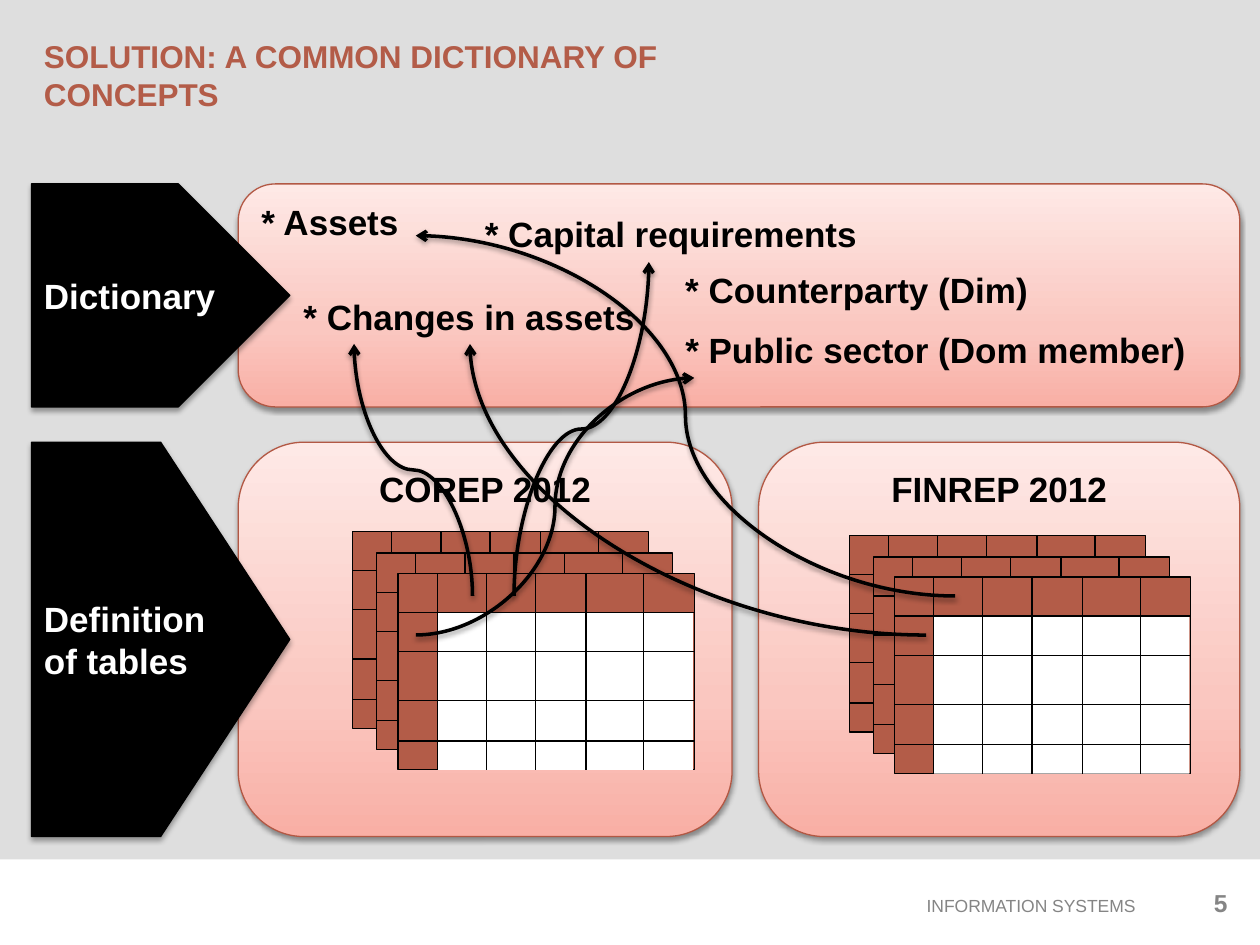
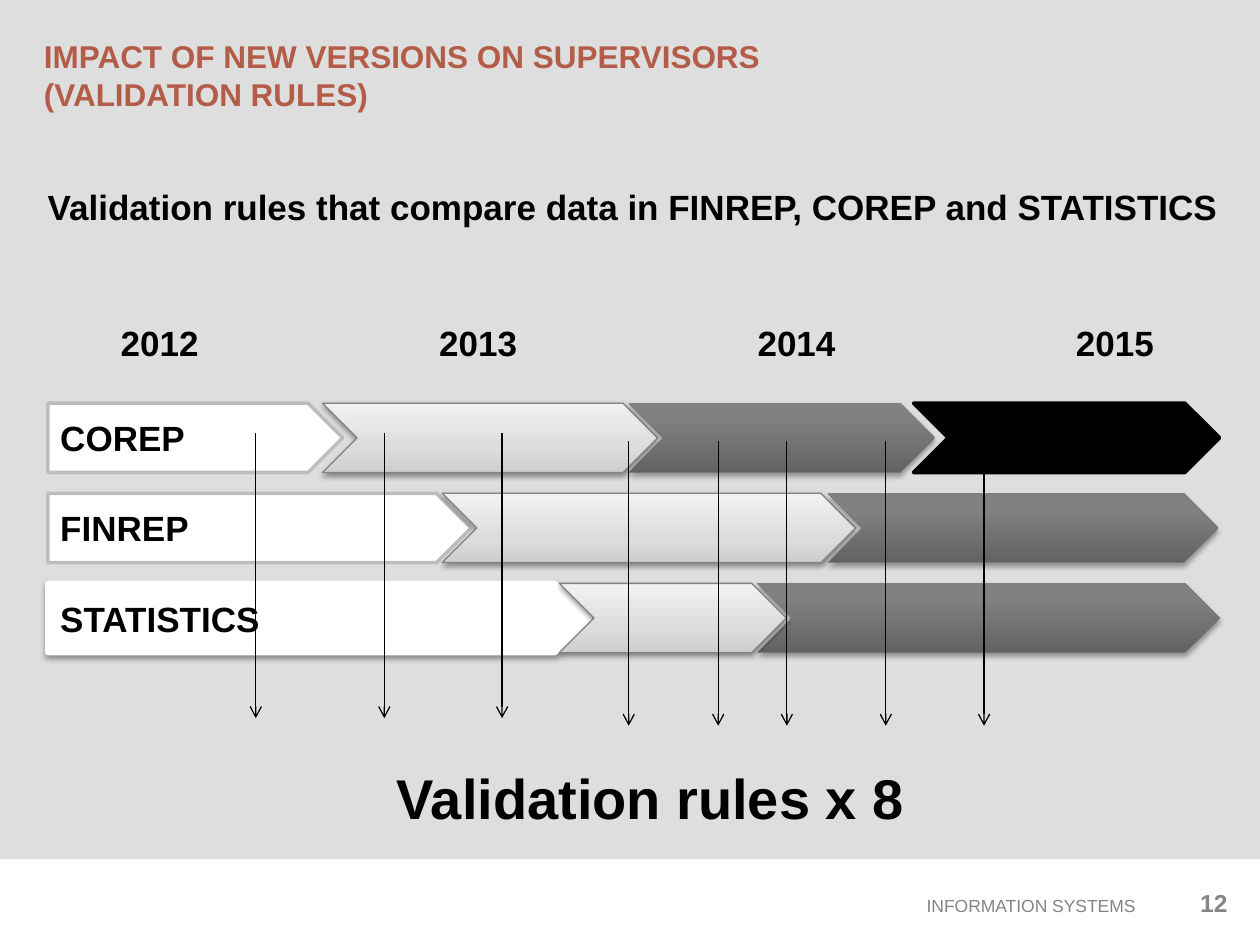
import math
from dataclasses import dataclass
from typing import Optional

import lxml.etree
import pptx
import pptx.dml.color
import pptx.enum.shapes
import pptx.enum.text
import pptx.oxml.ns
import pptx.util

# Every length is a count of grid cells: 100 columns by 75 rows, 0.1 inch each
CELL = 0.1
COLUMNS, ROWS = 100, 75

FONT = "Arial"
BLACK, WHITE, BACKDROP = "000000", "FFFFFF", "DEDEDE"
BRICK, BRICK_EDGE, FOOTER_GREY = "B35C48", "B25844", "858585"

Shapes = pptx.enum.shapes.MSO_SHAPE
Curves = pptx.enum.shapes.MSO_CONNECTOR
Align = pptx.enum.text.PP_ALIGN
Anchor = pptx.enum.text.MSO_ANCHOR
qn = pptx.oxml.ns.qn


@dataclass(frozen=True)
class Area:
    left: float
    top: float
    width: float
    height: float


@dataclass(frozen=True)
class Shadow:
    alpha: int
    distance: float
    blur: float = 3.1


@dataclass(frozen=True)
class Look:
    fill: str = ""
    gradient: tuple = ()  # (percent, colour) stops, from bottom to top
    line: str = ""
    weight: float = 0.75
    shadow: Optional[Shadow] = None


@dataclass(frozen=True)
class Style:
    size: float = 20
    color: str = BLACK
    bold: bool = True
    align: Align = Align.LEFT
    anchor: Anchor = Anchor.TOP


@dataclass(frozen=True)
class Link:
    start: tuple
    end: tuple
    turn: int = 0  # degrees, clockwise
    geometry: str = "curvedConnector3"


SOFT, FIRM = Shadow(38, 1.6), Shadow(35, 1.8)
PANEL = Look(gradient=((0, "F9AFA5"), (35, "FAC7C0"), (100, "FEE9E6")),
             line=BRICK_EDGE, shadow=SOFT)
LABEL = Look(fill=BLACK, line=BLACK, shadow=FIRM)
SHEET = Look(fill=BRICK, line=BLACK)
PALE = Look(gradient=((0, "CECECE"), (35, "DCDCDC"), (100, "F2F2F2")),
            line="828282", shadow=SOFT)
DARK = Look(gradient=((0, "636363"), (80, "818181"), (100, "818181")), shadow=FIRM)
SOLID = Look(fill=BLACK, line=BLACK, weight=2)
FIRST = Look(fill=WHITE, line="BDBDBD", weight=2)
RAISED = Look(fill=WHITE, line=WHITE, weight=3, shadow=SOFT)

BODY = Style()
CENTERED = Style(align=Align.CENTER)
MIDDLE = Style(anchor=Anchor.MIDDLE)
LABEL_TEXT = Style(color=WHITE, anchor=Anchor.MIDDLE)
TITLE = Style(18, BRICK, anchor=Anchor.MIDDLE)
FOOTER = Style(10, FOOTER_GREY, False, Align.RIGHT, Anchor.MIDDLE)
NUMBER = Style(14, FOOTER_GREY, align=Align.RIGHT)


# Helpers
def cells(count: float) -> int:
    return pptx.util.Inches(count * CELL)


def rgb(color: str) -> pptx.dml.color.RGBColor:
    return pptx.dml.color.RGBColor.from_string(color)


def frame(area: Area) -> tuple:
    return tuple(cells(v) for v in (area.left, area.top, area.width, area.height))


def child(parent, tag: str, **attributes):
    values = {name: str(value) for name, value in attributes.items()}
    return lxml.etree.SubElement(parent, qn(tag), values)


def cast_shadow(effects, shadow: Shadow) -> None:
    outer = child(effects, "a:outerShdw", blurRad=pptx.util.Pt(shadow.blur),
                  dist=pptx.util.Pt(shadow.distance), dir=90 * 60000, rotWithShape=0)
    color = child(outer, "a:srgbClr", val=BLACK)
    child(color, "a:alpha", val=shadow.alpha * 1000)


def write(box, text: str, style: Style) -> None:
    box.text_frame.vertical_anchor = style.anchor
    para = box.text_frame.paragraphs[0]
    para.text = text
    para.alignment = style.align
    para.font.name = FONT
    para.font.size = pptx.util.Pt(style.size)
    para.font.bold = style.bold
    para.font.color.rgb = rgb(style.color)


def add_text(page, area: Area, text: str, style: Style = BODY, wrap: bool = False) -> None:
    box = page.shapes.add_textbox(*frame(area))
    box.text_frame.word_wrap = wrap
    write(box, text, style)


def add_shape(page, kind, area: Area, look: Look, text: str = "",
              style: Style = BODY) -> None:
    shape = page.shapes.add_shape(kind, *frame(area))
    shape.shadow.inherit = False
    properties = shape._element.spPr
    if look.gradient:
        shape.fill.gradient()
        shape.fill.gradient_angle = 90
        stops = properties.find(qn("a:gradFill")).find(qn("a:gsLst"))
        stops.clear()
        for percent, color in look.gradient:
            child(child(stops, "a:gs", pos=percent * 1000), "a:srgbClr", val=color)
    else:
        shape.fill.solid()
        shape.fill.fore_color.rgb = rgb(look.fill)
    if look.line:
        shape.line.color.rgb = rgb(look.line)
        shape.line.width = pptx.util.Pt(look.weight)
    else:
        shape.line.fill.background()
    if look.shadow:
        cast_shadow(properties.find(qn("a:effectLst")), look.shadow)
    if text:
        write(shape, text, style)


def add_line(page, start: tuple, end: tuple, weight: float = 0.75, arrow: bool = False,
             kind=Curves.STRAIGHT, shadow: Optional[Shadow] = None):
    line = page.shapes.add_connector(kind, *(cells(v) for v in (*start, *end)))
    line.line.color.rgb = rgb(BLACK)
    line.line.width = pptx.util.Pt(weight)
    properties = line._element.spPr
    if arrow:
        child(properties.find(qn("a:ln")), "a:tailEnd", type="arrow")
    effects = child(properties, "a:effectLst")
    if shadow:
        cast_shadow(effects, shadow)
    return line


def add_curve(page, link: Link) -> None:
    """Place the ends as they lie before the turn, then turn the frame."""
    middle_x = (link.start[0] + link.end[0]) / 2
    middle_y = (link.start[1] + link.end[1]) / 2
    cos, sin = (f(math.radians(link.turn)) for f in (math.cos, math.sin))

    def turned_back(point: tuple) -> tuple:
        x, y = point[0] - middle_x, point[1] - middle_y
        return middle_x + x * cos + y * sin, middle_y - x * sin + y * cos

    curve = add_line(page, turned_back(link.start), turned_back(link.end), 2, True,
                     Curves.CURVE, SOFT)
    properties = curve._element.spPr
    properties.find(qn("a:prstGeom")).set("prst", link.geometry)
    if link.turn:
        properties.find(qn("a:xfrm")).set("rot", str(link.turn * 60000))


def add_page(deck, title: str, number: int):
    page = deck.slides.add_slide(deck.slide_layouts[6])
    add_shape(page, Shapes.RECTANGLE, Area(0, 0, COLUMNS, 68.2), Look(fill=BACKDROP))
    add_text(page, Area(30.8, 70.5, 60.3, 2.7), "INFORMATION SYSTEMS", FOOTER, True)
    add_text(page, Area(2.5, 1.2, 64.8, 9.5), title, TITLE, True)
    add_text(page, Area(92.7, 70, 5.7, 3.5), str(number), NUMBER, True)
    return page


# Stacked tables
SHEET_WIDTH, SHEET_HEIGHT, HEADER = 23.5, 15.6, 3.1
COLUMN_EDGES = (3.1, 7, 10.9, 14.9, 19.5)
ROW_EDGES = (3.1, 6.2, 10.1, 13.3)
LAYERS = ((0, 0), (1.9, 1.7), (3.6, 3.3))


def add_stack(page, left: float, top: float) -> None:
    for layer in LAYERS:
        x, y = left + layer[0], top + layer[1]
        add_shape(page, Shapes.RECTANGLE, Area(x, y, SHEET_WIDTH, SHEET_HEIGHT), SHEET)
        if layer == LAYERS[-1]:
            body = Area(x + HEADER, y + HEADER, SHEET_WIDTH - HEADER - 0.1,
                        SHEET_HEIGHT - HEADER)
            add_shape(page, Shapes.RECTANGLE, body, Look(fill=WHITE))
        for edge in COLUMN_EDGES:
            add_line(page, (x + edge, y), (x + edge, y + SHEET_HEIGHT))
        for edge in ROW_EDGES:
            add_line(page, (x + SHEET_WIDTH, y + edge), (x, y + edge))


# Slide: common dictionary
CONCEPTS = (
    ("* Changes in assets", Area(23.1, 23, 28.5, 4.4)),
    ("* Capital requirements", Area(37.5, 16.4, 31.9, 4.4)),
    ("* Counterparty (Dim)", Area(53.4, 20.8, 29.4, 4.4)),
    ("* Public sector (Dom member)", Area(53.4, 25.6, 42.2, 4.4)),
)
LINKS = (
    Link((37.5, 47.3), (28.1, 27.3), 270),
    Link((40.8, 47.3), (51.5, 20.8), 90),
    Link((33, 50.4), (55.1, 30)),
    Link((75.8, 47.3), (33, 18.7), 180),
    Link((73.5, 50.4), (37.3, 27.3), 180, "curvedConnector2"),
)


def build_dictionary(deck) -> None:
    page = add_page(deck, "SOLUTION: A COMMON DICTIONARY OF CONCEPTS", 5)
    panel, label = Shapes.ROUNDED_RECTANGLE, Shapes.PENTAGON
    add_shape(page, panel, Area(18.9, 14.6, 79.5, 17.7), PANEL, "* Assets")
    for text, area in CONCEPTS:
        add_text(page, area, text)
    add_shape(page, label, Area(2.5, 14.6, 20.5, 17.7), LABEL, "Dictionary", LABEL_TEXT)
    add_shape(page, panel, Area(18.9, 35.1, 39.2, 31.3), PANEL, "COREP 2012", CENTERED)
    add_shape(page, panel, Area(60.2, 35.1, 38.2, 31.3), PANEL, "FINREP 2012", CENTERED)
    add_shape(page, label, Area(2.5, 35.1, 20.5, 31.3), LABEL, "Definition of tables",
              LABEL_TEXT)
    add_stack(page, 28, 42.2)
    add_stack(page, 67.4, 42.5)
    for link in LINKS:
        add_curve(page, link)


# Slide: validation rules
YEAR_LEFT, YEAR_STEP = 8.6, 25.27
LANE_LEFT, LANE_TOP, LANE_STEP, LANE_HEIGHT = 3.8, 32, 7.15, 5.5
# Per lane: name, width and look of the first version, then (left, width, look) of the rest
LANES = (
    ("COREP", 23.4, FIRST, ((25.6, 26.6, PALE), (49.9, 24.3, DARK), (72.5, 24.3, SOLID))),
    ("FINREP", 33.6, FIRST, ((35.1, 32.8, PALE), (65.7, 31, DARK))),
    ("STATISTICS", 43, RAISED, ((60.1, 36.7, DARK), (44.4, 18, PALE))),
)
RULE_LENGTH = 22.6
RULES = ((34.4, (20.3, 30.5, 39.85)), (35, (49.9, 57, 62.45, 70.3, 78.1)))


def build_validation(deck) -> None:
    page = add_page(deck, "IMPACT OF NEW VERSIONS ON SUPERVISORS (VALIDATION RULES)", 12)
    add_text(page, Area(2.8, 14.2, 97.2, 4.4),
             "Validation rules that compare data in FINREP, COREP and STATISTICS")
    for index, year in enumerate(range(2012, 2016)):
        add_text(page, Area(YEAR_LEFT + index * YEAR_STEP, 25, 8.3, 4.4), str(year))
    for index, (name, width, look, versions) in enumerate(LANES):
        top = LANE_TOP + index * LANE_STEP
        add_shape(page, Shapes.PENTAGON, Area(LANE_LEFT, top, width, LANE_HEIGHT), look,
                  name, MIDDLE)
        for left, span, version_look in versions:
            add_shape(page, Shapes.CHEVRON, Area(left, top, span, LANE_HEIGHT),
                      version_look)
    for top, positions in RULES:
        for x in positions:
            add_line(page, (x, top), (x, top + RULE_LENGTH), arrow=True)
    add_text(page, Area(30.5, 60.1, 42.6, 6.4), "Validation rules x 8", Style(32))


def main() -> None:
    deck = pptx.Presentation()
    deck.slide_width, deck.slide_height = cells(COLUMNS), cells(ROWS)
    build_dictionary(deck)
    build_validation(deck)
    deck.save("out.pptx")


if __name__ == "__main__":
    main()
